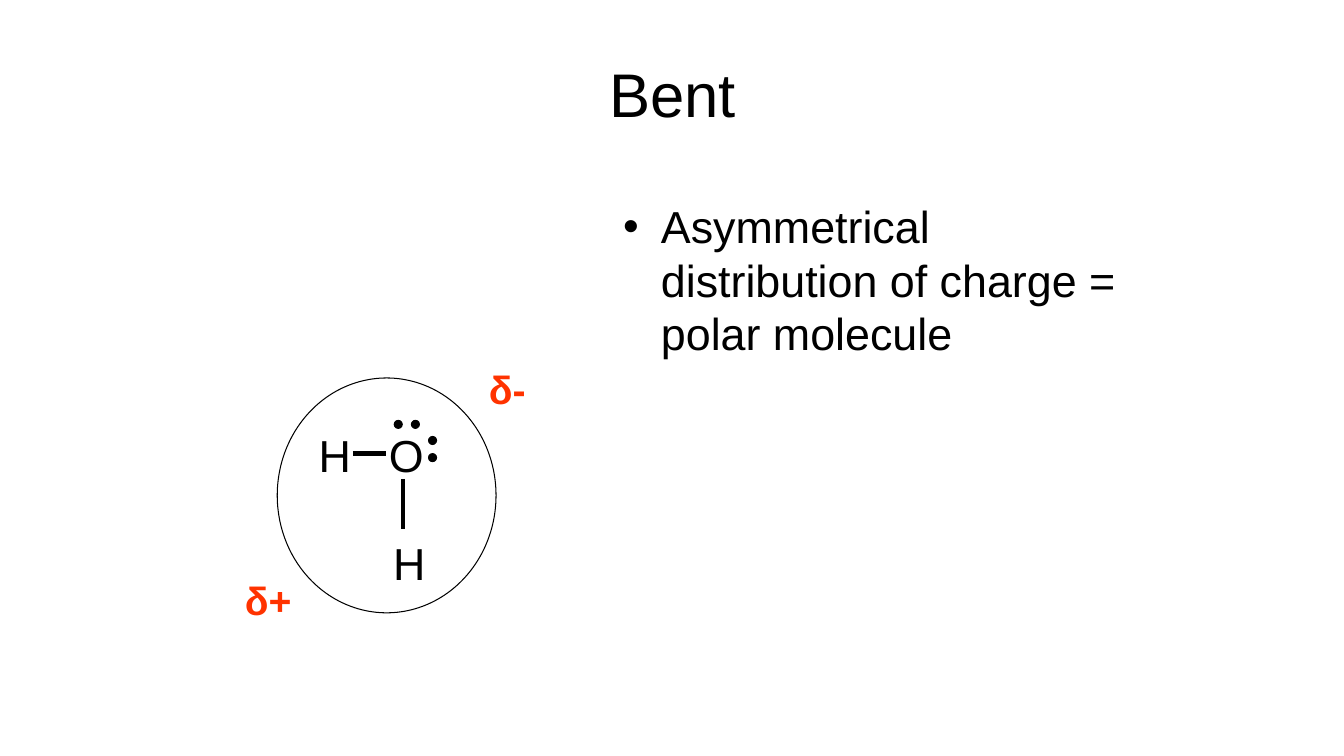
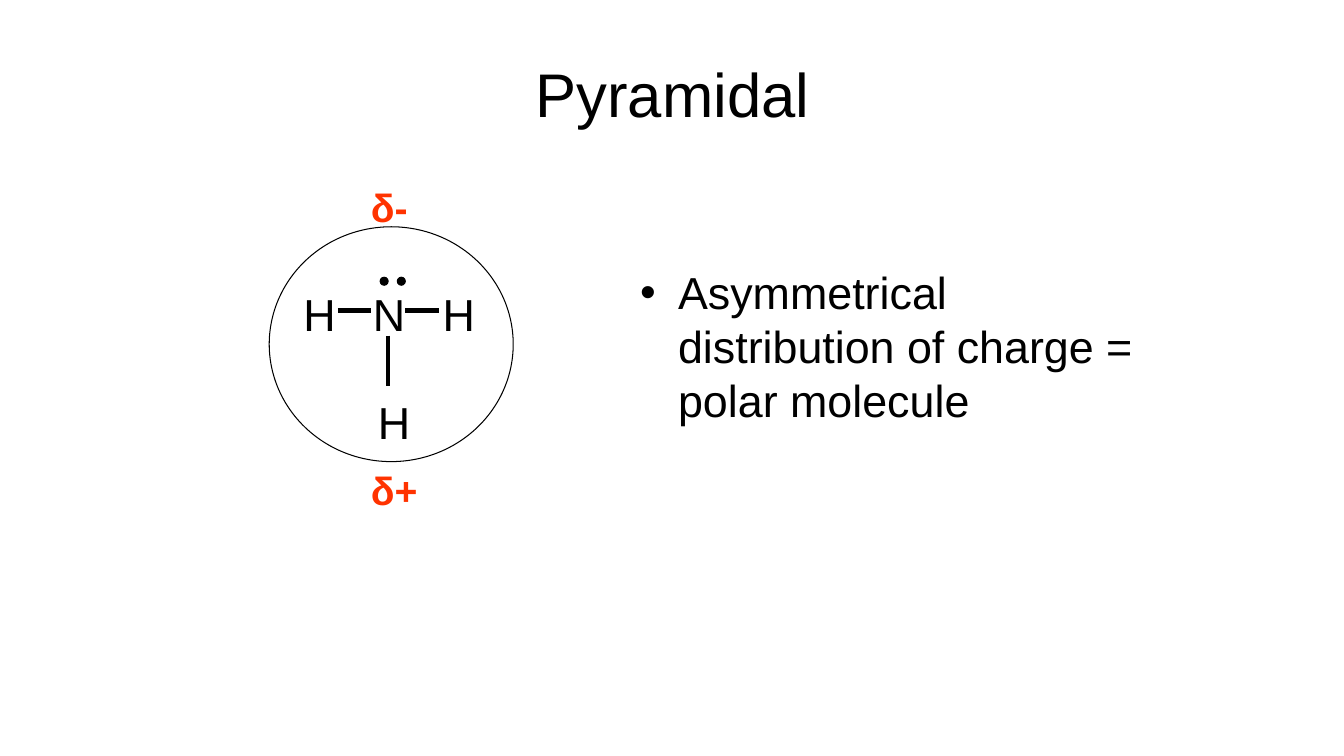
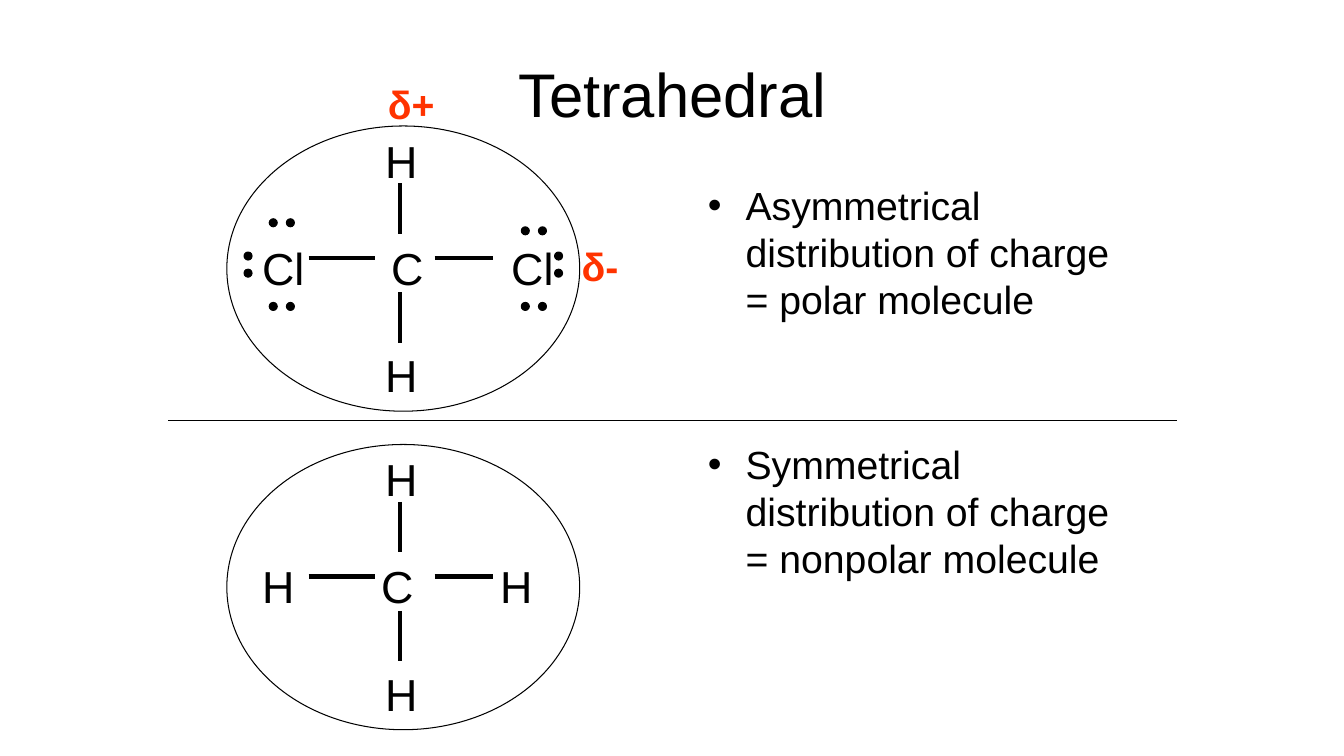
"""Build three slides on molecular shape and polarity."""
from pptx import Presentation
from pptx.dml.color import RGBColor
from pptx.enum import shapes, text
from pptx.oxml import ns
from pptx.util import Inches, Pt
from lxml import etree

COLORS = {"ink": "000000", "charge": "FF3300"}
FONT = "Arial"
TITLE_BOX = (0.67, 0.3, 12, 1.25)
ATOM_SIZE = (0.7, 0.56)
DOT = 0.08
DOT_STEP = 0.17
ACROSS, DOWN = (DOT_STEP, 0), (0, DOT_STEP)
POLAR = "Asymmetrical distribution of charge = polar molecule"
NONPOLAR = "Symmetrical distribution of charge = nonpolar molecule"


def tetrahedral(middle_row, top, pairs=(), charges=()):
    """Describe a carbon with four neighbours, its outline starting at top."""
    column = 3.98
    atoms = [("H", column, top + 0.34), ("H", column, top + 2.47)]
    atoms += [(symbol, x, top + 1.4) for symbol, x in middle_row]
    bonds = [(left, top + 1.31, right, top + 1.31) for left, right in ((3.06, 3.72), (4.31, 4.89))]
    bonds += [(3.97, top + start, 3.97, top + start + 0.5) for start in (0.57, 1.65)]
    return {"outline": (2.25, top, 3.5, 2.83), "atoms": atoms, "bonds": bonds,
            "pairs": pairs, "charges": charges}


WATER = {
    "outline": (2.75, 3.75, 2.17, 2.33),
    "atoms": [("H", 3.32, 4.51), ("O", 4.03, 4.51), ("H", 4.06, 5.58)],
    "bonds": [(3.5, 4.5, 3.83, 4.5), (4, 4.75, 4, 5.25)],
    "pairs": [(3.91, 4.17, ACROSS), (4.25, 4.33, DOWN)],
    "charges": [("δ-", 4.75, 3.58), ("δ+", 2.33, 5.67)],
}
AMMONIA = {
    "outline": (2.67, 2.25, 2.42, 2.33),
    "atoms": [("H", 3.17, 3.11), ("N", 3.86, 3.11), ("H", 4.55, 3.11), ("H", 3.91, 4.18)],
    "bonds": [(3.35, 3.08, 3.68, 3.08), (4.02, 3.08, 4.35, 3.08), (3.85, 3.33, 3.85, 3.83)],
    "pairs": [(3.77, 2.75, ACROSS)],
    "charges": [("δ-", 3.58, 1.77), ("δ+", 3.58, 4.58)],
}
DICHLOROMETHANE = tetrahedral(
    [("Cl", 2.81), ("C", 4.04), ("Cl", 5.28)], 1.25,
    [(2.67, 2.17, ACROSS), (2.67, 3, ACROSS), (2.42, 2.5, DOWN),
     (5.17, 2.25, ACROSS), (5.17, 3, ACROSS), (5.5, 2.5, DOWN)],
    [("δ-", 5.67, 2.35), ("δ+", 3.75, 0.75)])
METHANE = tetrahedral([("H", 2.76), ("C", 3.94), ("H", 5.12)], 4.41)

SLIDES = [
    {"title": "Bent", "body": (6.08, 1.92, 5.17, 4.95), "size": 32,
     "points": [POLAR], "molecules": [WATER], "dividers": []},
    {"title": "Pyramidal", "body": (6.25, 2.58, 5.42, 4.12), "size": 32,
     "points": [POLAR], "molecules": [AMMONIA], "dividers": []},
    {"title": "Tetrahedral", "body": (6.92, 1.75, 4.25, 4.95), "size": 28,
     "points": [POLAR, NONPOLAR], "molecules": [DICHLOROMETHANE, METHANE],
     "dividers": [(1.67, 4.17, 11.67, 4.17)]},
]


def color(name):
    return RGBColor.from_string(COLORS[name])


def place(shape, box):
    shape.left, shape.top, shape.width, shape.height = map(Inches, box)


def style(paragraph, size, name="ink", bold=False):
    for run in paragraph.runs:
        run.font.name, run.font.size, run.font.bold = FONT, Pt(size), bold
        run.font.color.rgb = color(name)


def add_ellipse(slide, box, filled=False):
    ellipse = slide.shapes.add_shape(shapes.MSO_SHAPE.OVAL, *map(Inches, box))
    ellipse.shadow.inherit = False
    ellipse.line.color.rgb = color("ink")
    ellipse.line.width = Pt(0.75)
    if filled:
        ellipse.fill.solid()
        ellipse.fill.fore_color.rgb = color("ink")
    else:
        ellipse.fill.background()


def add_line(slide, ends, width):
    line = slide.shapes.add_connector(shapes.MSO_CONNECTOR.STRAIGHT, *map(Inches, ends))
    line.line.color.rgb = color("ink")
    line.line.width = Pt(width)
    etree.SubElement(line._element.spPr, ns.qn("a:effectLst"))


def add_atom(slide, symbol, x, y):
    width, height = ATOM_SIZE
    box = (x - width / 2, y - height / 2, width, height)
    frame = slide.shapes.add_textbox(*map(Inches, box)).text_frame
    frame.margin_left = frame.margin_right = frame.margin_top = frame.margin_bottom = 0
    frame.vertical_anchor = text.MSO_ANCHOR.MIDDLE
    frame.text = symbol
    frame.paragraphs[0].alignment = text.PP_ALIGN.CENTER
    style(frame.paragraphs[0], 32)


def add_charge(slide, label, left, top):
    frame = slide.shapes.add_textbox(*map(Inches, (left, top, 0.66, 0.57))).text_frame
    frame.word_wrap = True
    frame.text = label
    style(frame.paragraphs[0], 28, "charge", True)


def add_molecule(slide, molecule):
    add_ellipse(slide, molecule["outline"])
    for atom in molecule["atoms"]:
        add_atom(slide, *atom)
    for bond in molecule["bonds"]:
        add_line(slide, bond, 3)
    for left, top, (step_x, step_y) in molecule["pairs"]:
        for index in range(2):
            add_ellipse(slide, (left + index * step_x, top + index * step_y, DOT, DOT), True)
    for charge in molecule["charges"]:
        add_charge(slide, *charge)


def add_slide(presentation, layout, content):
    slide = presentation.slides.add_slide(layout)
    title, body = slide.shapes.title, slide.placeholders[1]
    title.text_frame.text = content["title"]
    style(title.text_frame.paragraphs[0], 44)
    place(body, content["body"])
    body.text_frame.text = "\n".join(content["points"])
    body.text_frame.auto_size = text.MSO_AUTO_SIZE.NONE
    for index, paragraph in enumerate(body.text_frame.paragraphs):
        style(paragraph, content["size"])
        if index:
            paragraph.space_before = Pt(84)
    for divider in content["dividers"]:
        add_line(slide, divider, 0.75)
    for molecule in content["molecules"]:
        add_molecule(slide, molecule)


def main():
    presentation = Presentation()
    presentation.slide_width, presentation.slide_height = Inches(13.33), Inches(7.5)
    layout = presentation.slide_layouts[1]
    place(layout.placeholders[0], TITLE_BOX)
    for content in SLIDES:
        add_slide(presentation, layout, content)
    presentation.save("out.pptx")


if __name__ == "__main__":
    main()
